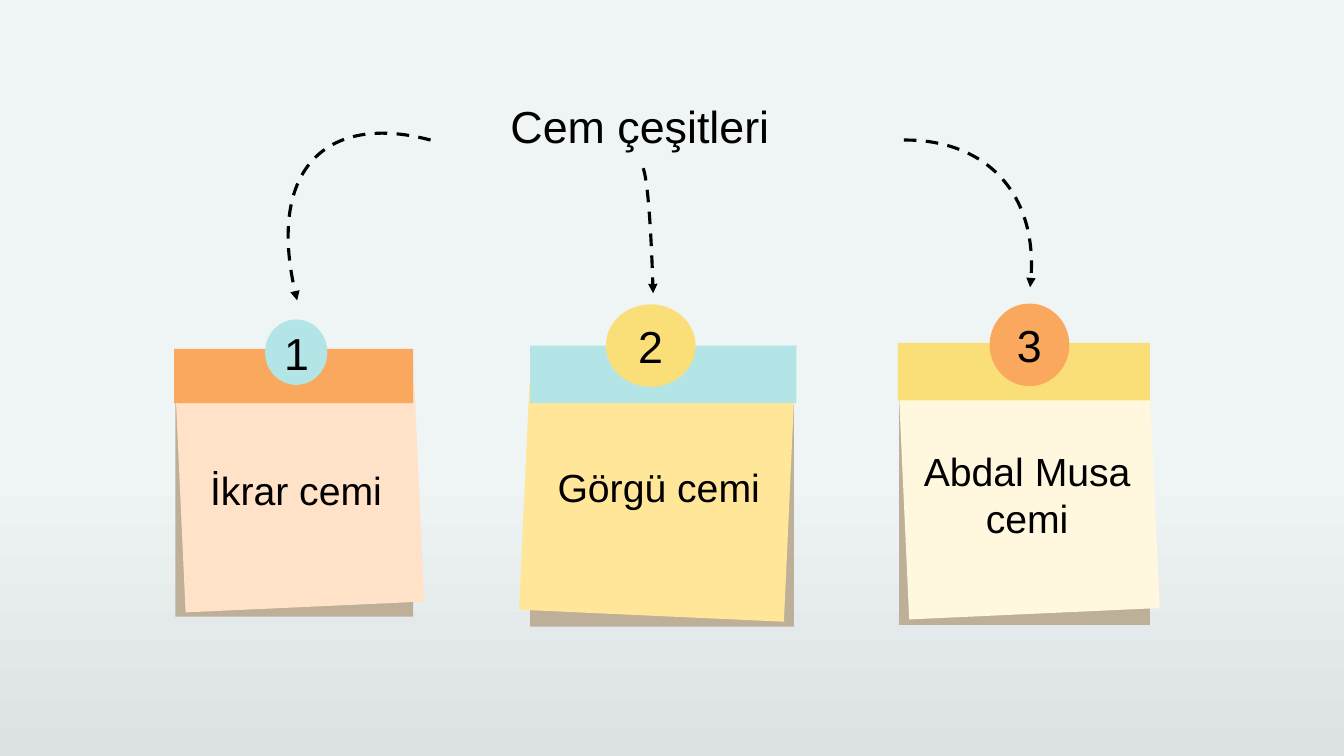
from dataclasses import dataclass

from lxml.etree import SubElement
from pptx import Presentation
from pptx.dml.color import RGBColor
from pptx.enum.dml import MSO_LINE
from pptx.enum.shapes import MSO_SHAPE
from pptx.enum.text import MSO_ANCHOR, MSO_AUTO_SIZE, PP_ALIGN
from pptx.oxml.ns import qn
from pptx.shapes.autoshape import Shape
from pptx.shapes.shapetree import GroupShapes, SlideShapes
from pptx.slide import Slide
from pptx.text.text import TextFrame
from pptx.util import Cm, Pt

Box = tuple[float, float, float, float]  # left, top, width, height in cm
Point = tuple[float, float]


@dataclass(frozen=True)
class Theme:
    font: str = "Arial"
    heading: int = 32
    label: int = 28
    line: float = 2.25
    ink: str = "000000"
    sky: str = "EFF4F5"
    floor: str = "DCE1E4"
    shade: str = "BEAF99"
    orange: str = "F9A85D"
    blue: str = "B3E5E6"
    yellow: str = "FADE78"
    peach: str = "FFE2C8"
    gold: str = "FFE699"
    cream: str = "FFF8DE"


THEME = Theme()


@dataclass(frozen=True)
class Note:
    number: int
    text: str
    tilt: float
    shade: Box
    sheet: Box
    band: Box
    badge: Box
    label: Box
    sheet_color: str
    band_color: str
    badge_color: str
    margin: Point = (0, 0)


@dataclass(frozen=True)
class Arrow:
    """A cubic curve from start to end, bent by two control points."""
    start: Point
    control1: Point
    control2: Point
    end: Point


NOTES = [
    Note(1, "İkrar cemi", -2.6,
         shade=(4.42, 9.19, 5.99, 6.35), sheet=(4.55, 9.86, 6.02, 5.44),
         band=(4.39, 8.79, 6.02, 1.37), badge=(6.68, 8.05, 1.57, 1.65),
         label=(4.55, 11.76, 5.82, 1.19), sheet_color=THEME.peach,
         band_color=THEME.orange, badge_color=THEME.blue),
    Note(2, "Görgü cemi", 2.6,
         shade=(13.36, 9.14, 6.65, 6.65), sheet=(13.21, 9.83, 6.68, 5.69),
         band=(13.36, 8.71, 6.71, 1.45), badge=(15.27, 7.67, 2.26, 2.08),
         label=(13.69, 11.68, 5.82, 1.19), sheet_color=THEME.gold,
         band_color=THEME.blue, badge_color=THEME.yellow),
    Note(3, "Abdal Musa cemi", -2.6,
         shade=(22.66, 9.07, 6.32, 6.68), sheet=(22.78, 9.75, 6.32, 5.72),
         band=(22.63, 8.64, 6.35, 1.45), badge=(24.94, 7.65, 2.01, 2.08),
         label=(22.81, 11.13, 6.15, 2.64), sheet_color=THEME.cream,
         band_color=THEME.yellow, badge_color=THEME.orange, margin=(0.25, 0.13)),
]

ARROWS = [
    Arrow((10.85, 3.53), (8.26, 2.84), (6.65, 4.29), (7.49, 7.57)),
    Arrow((16.21, 4.24), (16.31, 4.5), (16.41, 5.64), (16.46, 7.39)),
    Arrow((22.78, 3.53), (24.79, 3.51), (26.24, 4.9), (25.96, 7.24)),
]


def paint_background(slide: Slide) -> None:
    fill = slide.background.fill
    fill.gradient()
    fill.gradient_angle = 270
    stops = zip(fill.gradient_stops, (THEME.sky, THEME.floor), (0.62, 1))
    for stop, color, position in stops:
        stop.color.rgb = RGBColor.from_string(color)
        stop.position = position


def write(tf: TextFrame, text: str, size: int, margin: Point) -> None:
    tf.word_wrap = True
    tf.margin_left = tf.margin_right = Cm(margin[0])
    tf.margin_top = tf.margin_bottom = Cm(margin[1])
    p = tf.paragraphs[0]
    p.text = text
    p.alignment = PP_ALIGN.CENTER
    p.font.name = THEME.font
    p.font.size = Pt(size)
    p.font.color.rgb = RGBColor.from_string(THEME.ink)


def add_text(shapes: SlideShapes, box: Box, text: str, size: int,
             margin: Point = (0, 0)) -> None:
    tf = shapes.add_textbox(*map(Cm, box)).text_frame
    write(tf, text, size, margin)
    tf.auto_size = MSO_AUTO_SIZE.SHAPE_TO_FIT_TEXT


def add_filled(shapes: GroupShapes, kind: MSO_SHAPE, box: Box, color: str) -> Shape:
    sp = shapes.add_shape(kind, *map(Cm, box))
    sp.shadow.inherit = False
    sp.fill.solid()
    sp.fill.fore_color.rgb = RGBColor.from_string(color)
    sp.line.fill.background()
    return sp


def add_note(shapes: SlideShapes, note: Note) -> None:
    group = shapes.add_group_shape().shapes
    add_filled(group, MSO_SHAPE.RECTANGLE, note.shade, THEME.shade)
    sheet = add_filled(group, MSO_SHAPE.RECTANGLE, note.sheet, note.sheet_color)
    sheet.rotation = note.tilt
    add_filled(group, MSO_SHAPE.RECTANGLE, note.band, note.band_color)
    badge = add_filled(group, MSO_SHAPE.OVAL, note.badge, note.badge_color)
    write(badge.text_frame, str(note.number), THEME.heading, (0.25, 0.25))
    badge.text_frame.vertical_anchor = MSO_ANCHOR.MIDDLE
    add_text(shapes, note.label, note.text, THEME.label, note.margin)


def add_arrow(shapes: SlideShapes, arrow: Arrow) -> None:
    """Draw the four points as a polyline, then turn its segments into one curve."""
    builder = shapes.build_freeform(*map(Cm, arrow.start))
    bends = (arrow.control1, arrow.control2, arrow.end)
    builder.add_line_segments([(Cm(x), Cm(y)) for x, y in bends], close=False)
    sp = builder.convert_to_shape()
    outline = next(sp.element.iter(qn("a:path")))
    segments = outline.findall(qn("a:lnTo"))
    curve = SubElement(outline, qn("a:cubicBezTo"))
    for segment in segments:
        curve.append(segment[0])
        outline.remove(segment)

    sp.shadow.inherit = False
    sp.fill.background()
    sp.line.color.rgb = RGBColor.from_string(THEME.ink)
    sp.line.width = Pt(THEME.line)
    sp.line.dash_style = MSO_LINE.DASH
    ln = sp.element.spPr.find(qn("a:ln"))
    SubElement(ln, qn("a:tailEnd"), type="triangle")


def main() -> None:
    prs = Presentation()
    prs.slide_width, prs.slide_height = Cm(33.87), Cm(19.05)
    slide = prs.slides.add_slide(prs.slide_layouts[6])
    paint_background(slide)
    for note in NOTES:
        add_note(slide.shapes, note)
    add_text(slide.shapes, (10.87, 2.49, 10.52, 1.37), "Cem çeşitleri", THEME.heading)
    for arrow in ARROWS:
        add_arrow(slide.shapes, arrow)
    prs.save("out.pptx")


if __name__ == "__main__":
    main()
